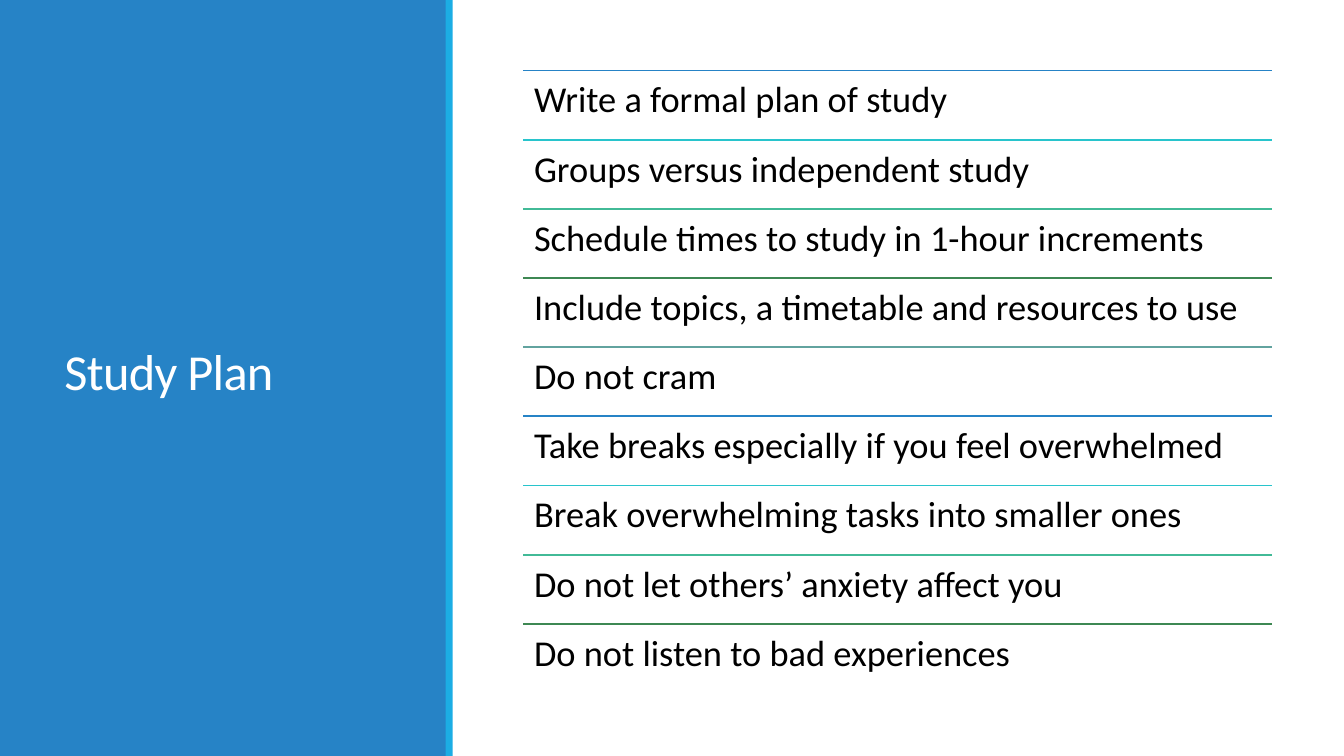
import pptx
import pptx.dml.color
import pptx.enum.shapes
import pptx.enum.text
import pptx.oxml
import pptx.oxml.ns
import pptx.util

Pt = pptx.util.Pt
RGBColor = pptx.dml.color.RGBColor

BLUE = RGBColor(0x26, 0x83, 0xC6)
SKY = RGBColor(0x1C, 0xAD, 0xE4)
TURQUOISE = RGBColor(0x28, 0xC4, 0xCC)
MINT = RGBColor(0x42, 0xBA, 0x97)
GREEN = RGBColor(0x3E, 0x88, 0x53)
SAGE = RGBColor(0x62, 0xA3, 0x9F)
WHITE = RGBColor(0xFF, 0xFF, 0xFF)
BLACK = RGBColor(0x00, 0x00, 0x00)
RULE_COLORS = [BLUE, TURQUOISE, MINT, GREEN, SAGE]

PAGE_WIDTH, PAGE_HEIGHT = 960, 540
LIST_LEFT, LIST_TOP, LIST_WIDTH = 373.7, 50.4, 535
ROW_HEIGHT = 49.4

TIPS = [
    "Write a formal plan of study",
    "Groups versus independent study",
    "Schedule times to study in 1-hour increments",
    "Include topics, a timetable and resources to use",
    "Do not cram",
    "Take breaks especially if you feel overwhelmed",
    "Break overwhelming tasks into smaller ones",
    "Do not let others’ anxiety affect you",
    "Do not listen to bad experiences",
]

TITLE_FONT = {"name": "Calibri", "size": Pt(36)}
TIP_FONT = {"name": "Calibri", "size": Pt(26)}
TITLE_FRAME = {
    "word_wrap": True,
    "vertical_anchor": pptx.enum.text.MSO_ANCHOR.MIDDLE,
}
TIP_FRAME = {
    "word_wrap": True,
    "vertical_anchor": pptx.enum.text.MSO_ANCHOR.TOP,
    "margin_left": Pt(7.8),
    "margin_right": Pt(7.8),
    "margin_top": Pt(7.8),
    "margin_bottom": Pt(7.8),
}


def apply_format(target, values):
    for name, value in values.items():
        setattr(target, name, value)


def add_panel(page, left, width, color):
    """Add a full-height rectangle without an outline."""
    panel = page.shapes.add_shape(
        pptx.enum.shapes.MSO_SHAPE.RECTANGLE,
        Pt(left), Pt(0), Pt(width), Pt(PAGE_HEIGHT))
    panel.shadow.inherit = False
    panel.fill.solid()
    panel.fill.fore_color.rgb = color
    panel.line.fill.background()


def add_text(page, text, bounds, frame_format, font_format, color, line_spacing):
    box = page.shapes.add_textbox(*[Pt(length) for length in bounds])
    apply_format(box.text_frame, frame_format)
    para = box.text_frame.paragraphs[0]
    para.line_spacing = line_spacing
    span = para.add_run()
    span.text = text
    apply_format(span.font, font_format)
    span.font.color.rgb = color
    return span


def add_rule(page, top, color):
    rule = page.shapes.add_connector(
        pptx.enum.shapes.MSO_CONNECTOR.STRAIGHT,
        Pt(LIST_LEFT), Pt(top), Pt(LIST_LEFT + LIST_WIDTH), Pt(top))
    rule.line.color.rgb = color
    rule.line.width = Pt(1.25)
    properties = rule._element.spPr
    properties.append(pptx.oxml.parse_xml(
        "<a:effectLst %s/>" % pptx.oxml.ns.nsdecls("a")))


def add_tips(page):
    for index, tip in enumerate(TIPS):
        top = LIST_TOP + index * ROW_HEIGHT
        add_rule(page, top, RULE_COLORS[index % len(RULE_COLORS)])
        add_text(page, tip, (LIST_LEFT, top, LIST_WIDTH, ROW_HEIGHT),
                 TIP_FRAME, TIP_FONT, BLACK, 0.9)


def main():
    deck = pptx.Presentation()
    apply_format(deck, {"slide_width": Pt(PAGE_WIDTH), "slide_height": Pt(PAGE_HEIGHT)})
    page = deck.slides.add_slide(deck.slide_layouts[6])
    add_panel(page, 0, 319, BLUE)
    title = add_text(page, "Study Plan", (39, 41, 242.6, 454.3),
                     TITLE_FRAME, TITLE_FONT, WHITE, 0.85)
    title.font._element.set("spc", "-50")
    add_panel(page, 318.3, 5, SKY)
    add_tips(page)
    deck.save("out.pptx")


if __name__ == "__main__":
    main()
